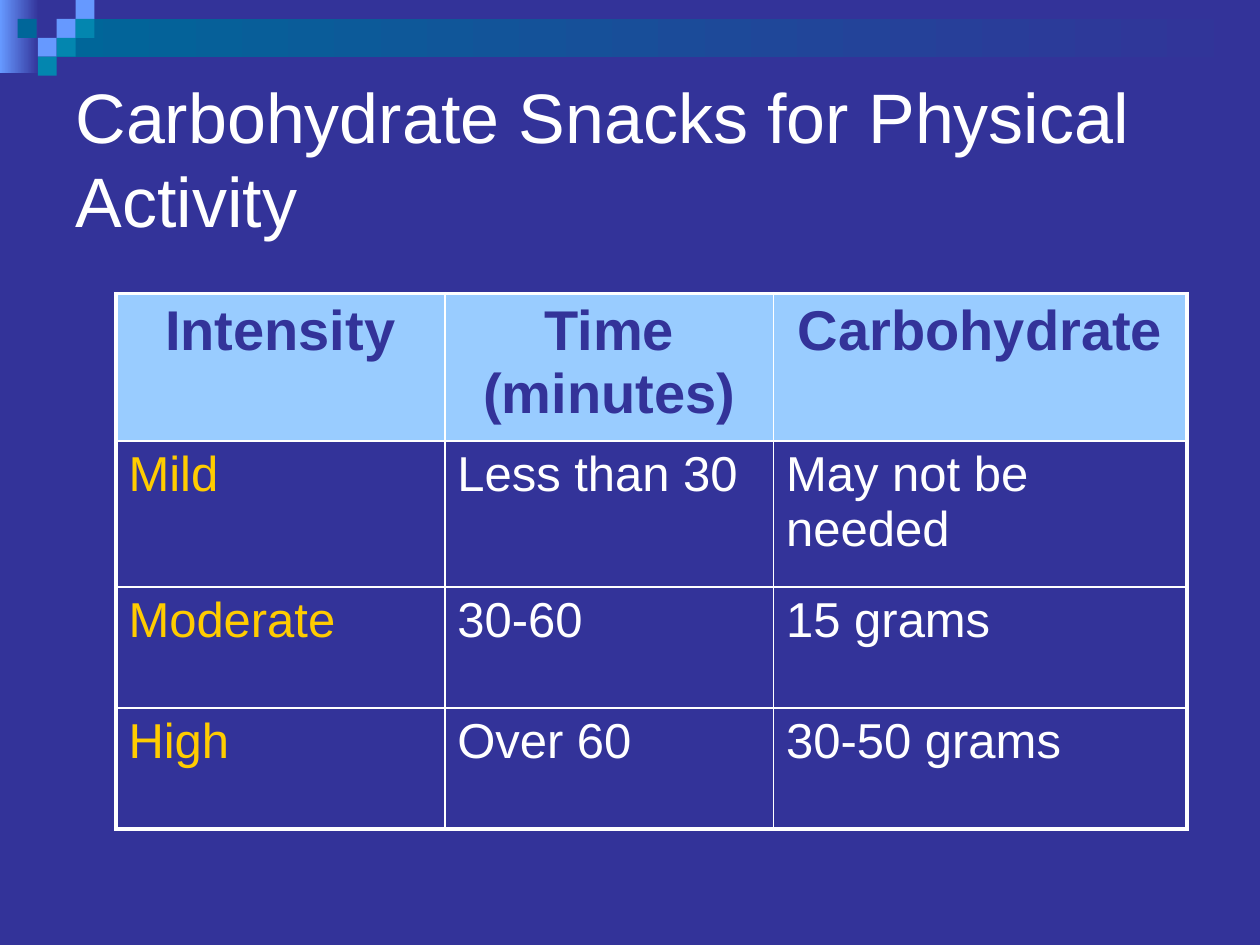
from dataclasses import dataclass

from lxml import etree
from pptx import Presentation
from pptx.dml.color import RGBColor
from pptx.enum.shapes import MSO_SHAPE
from pptx.enum.text import MSO_ANCHOR, MSO_AUTO_SIZE, PP_ALIGN
from pptx.oxml.ns import qn
from pptx.util import Inches, Pt

RECT = MSO_SHAPE.RECTANGLE
MIDDLE = MSO_ANCHOR.MIDDLE
NO_FIT = MSO_AUTO_SIZE.NONE
LEFT, CENTER = PP_ALIGN.LEFT, PP_ALIGN.CENTER


@dataclass(frozen=True)
class Theme:
    font: str = "Arial"
    navy: str = "333399"
    white: str = "FFFFFF"
    gold: str = "FFCC00"
    pale: str = "99CCFF"
    sky: str = "6699FF"
    teal: str = "0386AF"
    deep: str = "006699"
    title: int = 40
    head: int = 32
    body: int = 28
    outer: float = 2.25
    inner: float = 1


def rgb(color):
    return RGBColor.from_string(color)


class Deck:
    """Holds the theme and the current slide."""

    def __init__(self, slide, theme):
        self.slide, self.theme = slide, theme
        fill = slide.background.fill
        fill.solid()
        fill.fore_color.rgb = rgb(theme.navy)

    def rect(self, box, color, fade=None):
        """Draw a plain block, or one that fades from left to right."""
        shape = self.slide.shapes.add_shape(RECT, *map(Inches, box))
        shape.shadow.inherit = False
        shape.line.fill.background()
        if fade:
            shape.fill.gradient()
            shape.fill.gradient_angle = 0
            for stop, tint in zip(shape.fill.gradient_stops, (color, fade)):
                stop.color.rgb = rgb(tint)
        else:
            shape.fill.solid()
            shape.fill.fore_color.rgb = rgb(color)

    def run(self, para, text, size, color, bold=False):
        run = para.add_run()
        run.text = text
        font = run.font
        font.name, font.size, font.bold = self.theme.font, Pt(size), bold
        font.color.rgb = rgb(color)

    def title(self, text, box):
        shape = self.slide.shapes.title
        shape.left, shape.top, shape.width, shape.height = map(Inches, box)
        frame = shape.text_frame
        frame.word_wrap, frame.auto_size = True, NO_FIT
        frame.vertical_anchor = MIDDLE
        para = frame.paragraphs[0]
        para.alignment = LEFT
        self.run(para, text, self.theme.title, self.theme.white)

    def edge(self, cell, sides):
        """Set the cell's borders from pairs of tag and width."""
        props = cell._tc.get_or_add_tcPr()
        for tag, width in sides:
            line = etree.SubElement(props, qn(tag), w=str(Pt(width)))
            fill = etree.SubElement(line, qn("a:solidFill"))
            etree.SubElement(fill, qn("a:srgbClr"), val=self.theme.white)

    def space(self, para):
        """Put a fifth of a line above the paragraph."""
        gap = etree.SubElement(para._p.get_or_add_pPr(), qn("a:spcBef"))
        etree.SubElement(gap, qn("a:spcPct"), val="20000")

    def cell(self, cell, text, head, label):
        theme = self.theme
        para = cell.text_frame.paragraphs[0]
        self.space(para)
        if head:
            para.alignment = CENTER
            cell.fill.solid()
            cell.fill.fore_color.rgb = rgb(theme.pale)
            self.run(para, text, theme.head, theme.navy, True)
        else:
            cell.fill.background()
            color = theme.gold if label else theme.white
            self.run(para, text, theme.body, color)

    def table(self, rows, left, top, widths, heights):
        theme = self.theme
        size = (left, top, sum(widths), sum(heights))
        table = self.slide.shapes.add_table(
            len(rows), len(widths), *map(Inches, size)).table
        table.first_row = table.horz_banding = False
        for col, width in zip(table.columns, widths):
            col.width = Inches(width)
        for row, height in zip(table.rows, heights):
            row.height = Inches(height)
        for r, row in enumerate(rows):
            for c, text in enumerate(row):
                ends = (("a:lnL", c == 0), ("a:lnR", c == len(row) - 1),
                        ("a:lnT", r == 0), ("a:lnB", r == len(rows) - 1))
                cell = table.cell(r, c)
                self.edge(cell, [(tag, theme.outer if end else theme.inner)
                                 for tag, end in ends])
                self.cell(cell, text, r == 0, c == 0)


def main():
    prs = Presentation()
    prs.slide_width, prs.slide_height = Inches(10), Inches(7.5)
    theme = Theme()
    deck = Deck(prs.slides.add_slide(prs.slide_layouts[5]), theme)

    deck.rect((0, 0, 0.31, 0.58), theme.sky, theme.navy)
    deck.rect((0.45, 0.15, 9.55, 0.3), theme.deep, theme.navy)
    side = 0.15
    tiles = ((0.45, 0.15, theme.sky), (0.6, 0, theme.sky),
             (0.6, 0.15, theme.teal), (0.3, 0.3, theme.sky),
             (0.14, 0.15, theme.deep), (0.45, 0.3, theme.teal),
             (0.3, 0.45, theme.teal))
    for x, y, color in tiles:
        deck.rect((x, y, side, side), color)

    deck.title("Carbohydrate Snacks for Physical Activity", (0.5, 0.5, 9, 1.5))
    rows = (("Intensity", "Time (minutes)", "Carbohydrate"),
            ("Mild", "Less than 30", "May not be needed"),
            ("Moderate", "30-60", "15 grams"),
            ("High", "Over 60", "30-50 grams"))
    deck.table(rows, 0.92, 2.33, (2.61, 2.61, 3.28), (1.17, 1.16, 0.96, 0.96))
    prs.save("out.pptx")


if __name__ == "__main__":
    main()
